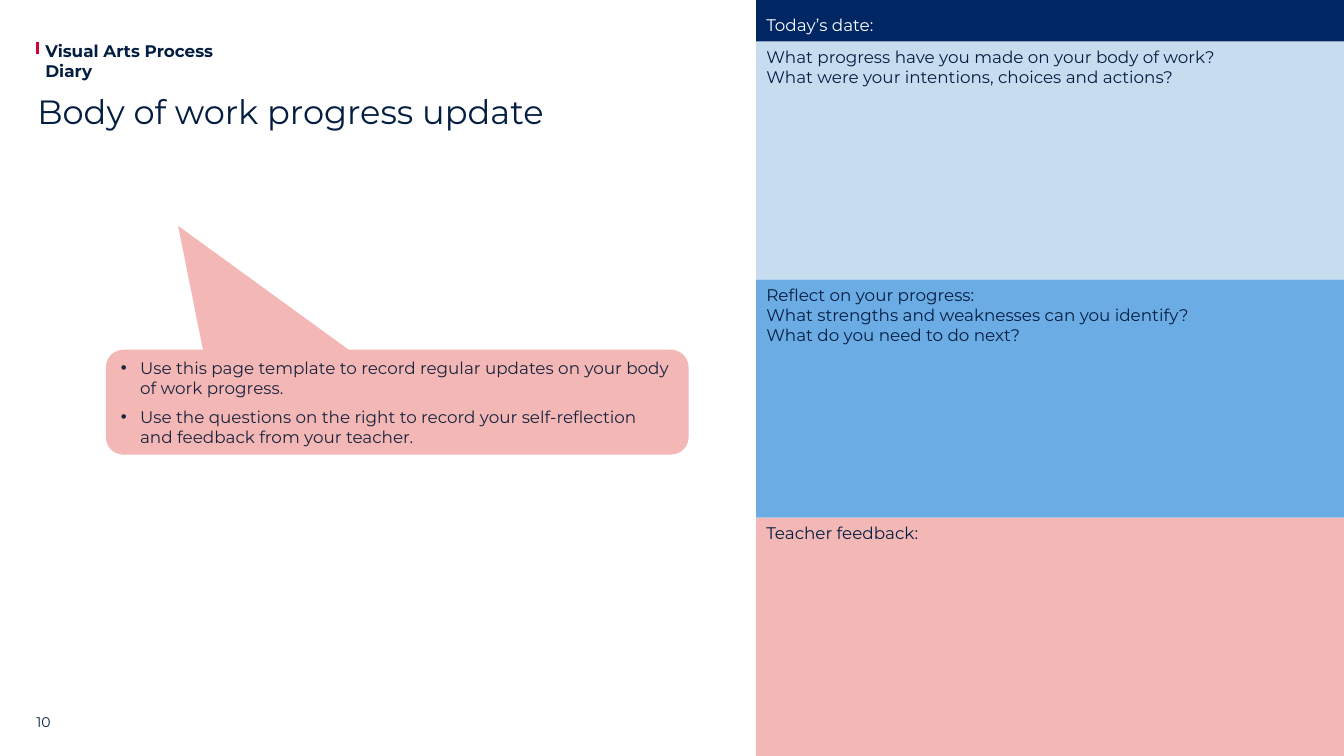
from copy import deepcopy
from dataclasses import dataclass

from lxml.etree import SubElement
from pptx import Presentation
from pptx.dml.color import RGBColor
from pptx.enum.shapes import MSO_CONNECTOR as Connector, MSO_SHAPE as Preset
from pptx.enum.text import MSO_ANCHOR as Anchor, MSO_AUTO_SIZE as AutoSize, PP_ALIGN as Align
from pptx.oxml.ns import qn
from pptx.util import Inches, Pt


@dataclass(frozen=True)
class Theme:
    font: str = "Montserrat"
    ink: str = "041E42"
    callout_ink: str = "19233E"
    white: str = "FFFFFF"
    red: str = "CE0037"
    navy: str = "002664"
    pale_blue: str = "C8DCF0"
    blue: str = "6CACE4"
    pink: str = "F3B8B5"
    title_size: int = 24
    text_size: int = 12
    number_size: int = 10


THEME = Theme()
SLIDE_WIDTH, SLIDE_HEIGHT = 13.33, 7.5
PANEL_LEFT, DATE_HEIGHT = 7.5, 0.41
QUESTIONS = [
    ("What progress have you made on your body of work?\n"
     "What were your intentions, choices and actions?", THEME.pale_blue),
    ("Reflect on your progress:\nWhat strengths and weaknesses can you identify?\n"
     "What do you need to do next?", THEME.blue),
    ("Teacher feedback:", THEME.pink),
]
INSTRUCTIONS = [
    "Use this page template to record regular updates on your body of work progress.",
    "Use the questions on the right to record your self-reflection and feedback from your teacher.",
]


def set_bullet(paragraph, bullet, indent):
    properties = paragraph._p.get_or_add_pPr()
    properties.set("marL", str(Inches(indent)))
    properties.set("indent", str(-Inches(indent)))
    if bullet:
        SubElement(properties, qn("a:buFont")).set("typeface", "Arial")
        SubElement(properties, qn("a:buChar")).set("char", bullet)
    else:
        SubElement(properties, qn("a:buNone"))


def add_lines(paragraph, text, size, color, bold):
    for index, line in enumerate(text.split("\n")):
        if index:
            paragraph.add_line_break()
        run = paragraph.add_run()
        run.text = line
        run.font.name = THEME.font
        run.font.size = Pt(size)
        run.font.bold = bold
        run.font.color.rgb = RGBColor.from_string(color)
    for line_break in paragraph._p.findall(qn("a:br")):
        line_break.append(deepcopy(run.font._rPr))


def write_text(shape, *texts, size=THEME.text_size, color=THEME.ink, bold=False,
               anchor=Anchor.TOP, margins=(0.1, 0.05), line_spacing=1.0,
               space_after=0, bullet=None, indent=0):
    frame = shape.text_frame
    frame.word_wrap = True
    frame.auto_size = AutoSize.NONE
    frame.vertical_anchor = anchor
    frame.margin_left = frame.margin_right = Inches(margins[0])
    frame.margin_top = frame.margin_bottom = Inches(margins[1])
    for index, text in enumerate(texts):
        paragraph = frame.add_paragraph() if index else frame.paragraphs[0]
        paragraph.alignment = Align.LEFT
        paragraph.line_spacing = line_spacing
        paragraph.space_before = Pt(0)
        paragraph.space_after = Pt(space_after)
        set_bullet(paragraph, bullet, indent)
        add_lines(paragraph, text, size, color, bold)


def place(shape, left, top, width, height):
    shape.left, shape.top = Inches(left), Inches(top)
    shape.width, shape.height = Inches(width), Inches(height)


def fill_shape(shape, color):
    shape.fill.solid()
    shape.fill.fore_color.rgb = RGBColor.from_string(color)
    shape.line.fill.background()


def add_label(slide, text, left, top, width, height, **text_format):
    label = slide.shapes.add_textbox(Inches(left), Inches(top), Inches(width), Inches(height))
    write_text(label, text, margins=(0, 0), **text_format)


def add_accent(slide, left, top, bottom):
    accent = slide.shapes.add_connector(
        Connector.STRAIGHT, Inches(left), Inches(top), Inches(left), Inches(bottom))
    accent.line.color.rgb = RGBColor.from_string(THEME.red)
    accent.line.width = Pt(2.5)
    SubElement(accent._element.spPr, qn("a:effectLst"))


def format_panel(panel, text, top, height, fill, **text_format):
    place(panel, PANEL_LEFT, top, SLIDE_WIDTH - PANEL_LEFT, height)
    fill_shape(panel, fill)
    write_text(panel, text, space_after=6, **text_format)


def add_callout(slide, texts, left, top, width, height):
    callout = slide.shapes.add_shape(
        Preset.ROUNDED_RECTANGULAR_CALLOUT,
        Inches(left), Inches(top), Inches(width), Inches(height))
    for index, value in enumerate((-0.376, -1.682, 0.167)):
        callout.adjustments[index] = value
    callout.shadow.inherit = False
    fill_shape(callout, THEME.pink)
    write_text(callout, *texts, color=THEME.callout_ink, anchor=Anchor.MIDDLE,
               space_after=6, bullet="•", indent=0.19)


def main():
    presentation = Presentation()
    presentation.slide_width = Inches(SLIDE_WIDTH)
    presentation.slide_height = Inches(SLIDE_HEIGHT)
    layout = presentation.slide_layouts.get_by_name("Comparison")
    slide = presentation.slides.add_slide(layout)
    title, *question_panels, date_panel = slide.placeholders

    add_accent(slide, 0.37, 0.42, 0.54)
    add_label(slide, "Visual Arts Process Diary", 0.45, 0.4, 2.15, 0.2, bold=True)
    place(title, 0.37, 0.85, 5.61, 0.55)
    write_text(title, "Body of work progress update", size=THEME.title_size,
               anchor=Anchor.MIDDLE, margins=(0, 0), line_spacing=0.9)
    add_label(slide, "10", 0.36, 6.85, 0.45, 0.4, size=THEME.number_size, anchor=Anchor.BOTTOM)

    panel_height = (SLIDE_HEIGHT - DATE_HEIGHT) / len(QUESTIONS)
    for index, (panel, (text, fill)) in enumerate(zip(question_panels, QUESTIONS)):
        format_panel(panel, text, DATE_HEIGHT + index * panel_height, panel_height, fill)
    format_panel(date_panel, "Today’s date:", 0, DATE_HEIGHT, THEME.navy,
                 color=THEME.white, line_spacing=1.5)
    add_callout(slide, INSTRUCTIONS, 1.05, 3.47, 5.78, 1.04)

    presentation.save("out.pptx")


if __name__ == "__main__":
    main()
